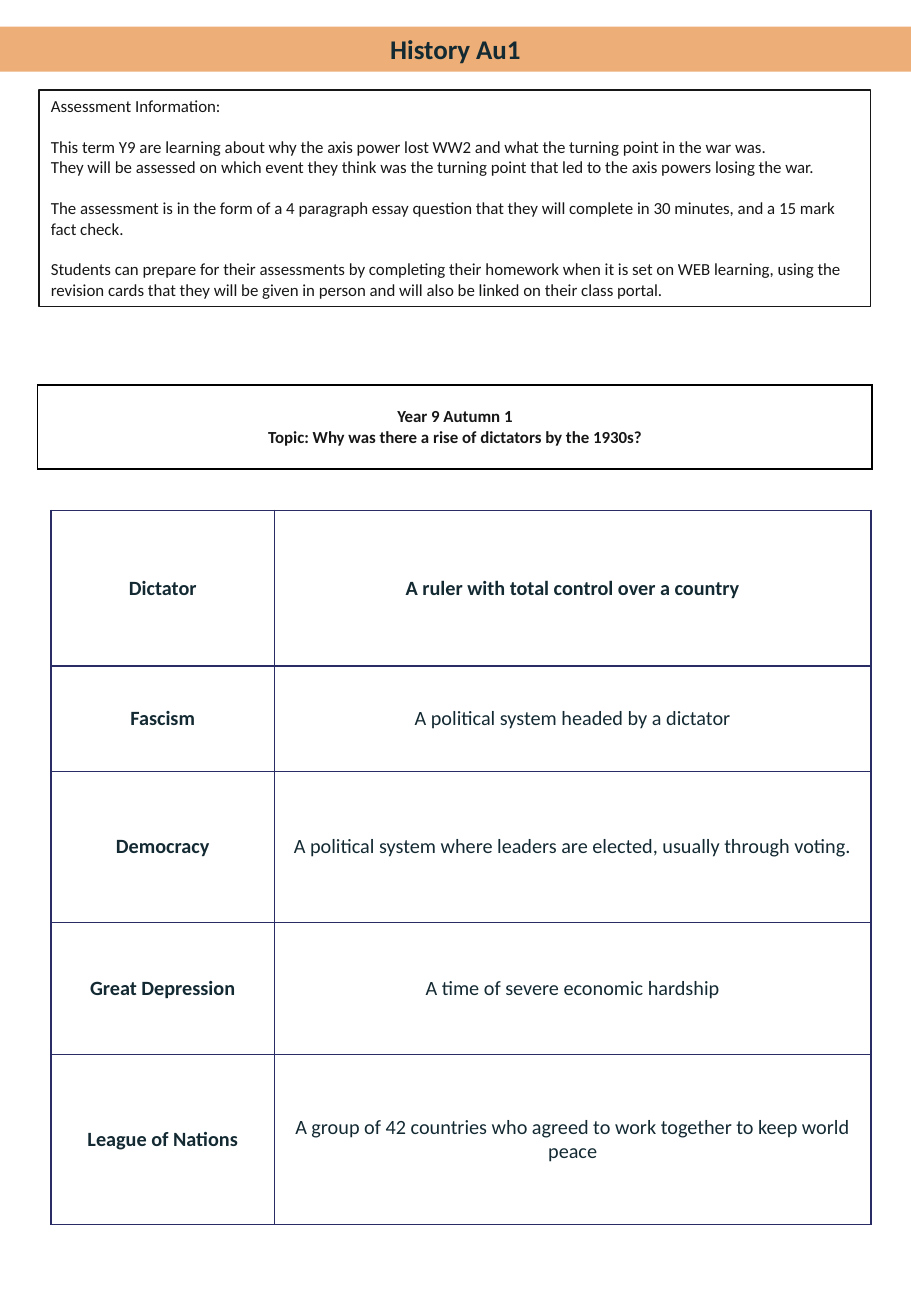
"""Build the Year 9 history page with assessment notes and key terms."""
from lxml import etree
from pptx import Presentation
from pptx.dml import color
from pptx.enum import shapes, text
from pptx.oxml import ns
from pptx.util import Inches, Pt

COLORS = {"banner": "EDAF77", "heading": "142A33", "body": "181717",
          "topic_border": "000000", "terms_border": "2A2C65"}
FONT = "Calibri"
BLANK_LINE = Pt(12.2)

ASSESSMENT = [
    ("Assessment Information:", 0),
    ("This term Y9 are learning about why the axis power lost WW2 and what the "
     "turning point in the war was.", BLANK_LINE),
    ("They will be assessed on which event they think was the turning point that "
     "led to the axis powers losing the war.", 0),
    ("The assessment is in the form of a 4 paragraph essay question that they will "
     "complete in 30 minutes, and a 15 mark fact check.", BLANK_LINE),
    ("Students can prepare for their assessments by completing their homework when "
     "it is set on WEB learning, using the revision cards that they will be given "
     "in person and will also be linked on their class portal.", BLANK_LINE),
]
TOPIC = [("Year 9 Autumn 1", 0),
         ("Topic: Why was there a rise of dictators by the 1930s?", 0)]
TERMS = [
    ("Dictator", "A ruler with total control over a country", 1.28),
    ("Fascism", "A political system headed by a dictator", 0.87),
    ("Democracy", "A political system where leaders are elected, usually through "
                  "voting.", 1.24),
    ("Great Depression", "A time of severe economic hardship", 1.09),
    ("League of Nations", "A group of 42 countries who agreed to work together to "
                          "keep world peace", 1.4),
]


def rgb(name):
    return color.RGBColor.from_string(COLORS[name])


def apply_format(target, values):
    for name, value in values.items():
        setattr(target, name, value)


def write(frame, lines, size, ink, bold=False, align=text.PP_ALIGN.CENTER):
    for index, (line, gap) in enumerate(lines):
        para = frame.paragraphs[0] if index == 0 else frame.add_paragraph()
        para.alignment = align
        if gap:
            para.space_before = gap
        span = para.add_run()
        span.text = line
        apply_format(span.font, {"name": FONT, "size": Pt(size), "bold": bold})
        span.font.color.rgb = rgb(ink)


def add_box(page, left, top, width, height, fill=None, line=None):
    box = page.shapes.add_shape(shapes.MSO_SHAPE.RECTANGLE, Inches(left),
                                Inches(top), Inches(width), Inches(height))
    box.shadow.inherit = False
    if fill:
        box.fill.solid()
        box.fill.fore_color.rgb = rgb(fill)
    else:
        box.fill.background()
    if line:
        box.line.color.rgb = rgb(line)
        box.line.width = Pt(0.75)
    else:
        box.line.fill.background()
    apply_format(box.text_frame, {
        "word_wrap": True, "vertical_anchor": text.MSO_ANCHOR.TOP,
        "auto_size": text.MSO_AUTO_SIZE.SHAPE_TO_FIT_TEXT})
    return box.text_frame


def set_borders(cell, ink):
    properties = cell._tc.get_or_add_tcPr()
    for index, side in enumerate(("lnL", "lnR", "lnT", "lnB")):
        border = etree.Element(ns.qn(f"a:{side}"), w=str(Pt(1)))
        fill = etree.SubElement(border, ns.qn("a:solidFill"))
        etree.SubElement(fill, ns.qn("a:srgbClr"), val=COLORS[ink])
        properties.insert(index, border)


def add_grid(page, left, top, widths, heights, ink, side_margin=0):
    table = page.shapes.add_table(
        len(heights), len(widths), Inches(left), Inches(top),
        Inches(sum(widths)), Inches(sum(heights))).table
    apply_format(table, {"first_row": False, "horz_banding": False})
    for column, width in zip(table.columns, widths):
        column.width = Inches(width)
    for row, height in zip(table.rows, heights):
        row.height = Inches(height)
    for cell in table.iter_cells():
        apply_format(cell, {
            "margin_left": Inches(side_margin), "margin_right": Inches(side_margin),
            "margin_top": 0, "margin_bottom": 0,
            "vertical_anchor": text.MSO_ANCHOR.MIDDLE})
        cell.fill.background()
        set_borders(cell, ink)
    return table


def main():
    deck = Presentation()
    apply_format(deck, {"slide_width": Inches(7.5), "slide_height": Inches(10.83)})
    page = deck.slides.add_slide(deck.slide_layouts[6])

    banner = add_box(page, 0, 0.22, 7.5, 0.37, fill="banner")
    write(banner, [("History Au1", 0)], 16, "heading", bold=True)
    notes = add_box(page, 0.32, 0.74, 6.85, 1.78, line="body")
    write(notes, ASSESSMENT, 10, "body", align=text.PP_ALIGN.LEFT)

    topic = add_grid(page, 0.31, 3.17, [6.87], [0.69], "topic_border", 0.07)
    write(topic.cell(0, 0).text_frame, TOPIC, 10, "body", bold=True)

    heights = [height for _, _, height in TERMS]
    terms = add_grid(page, 0.42, 4.2, [1.84, 4.91], heights, "terms_border")
    for row, (term, meaning, _) in enumerate(TERMS):
        write(terms.cell(row, 0).text_frame, [(term, 0)], 12, "heading", bold=True)
        write(terms.cell(row, 1).text_frame, [(meaning, 0)], 12, "heading",
              bold=row == 0)

    deck.save("out.pptx")


if __name__ == "__main__":
    main()
